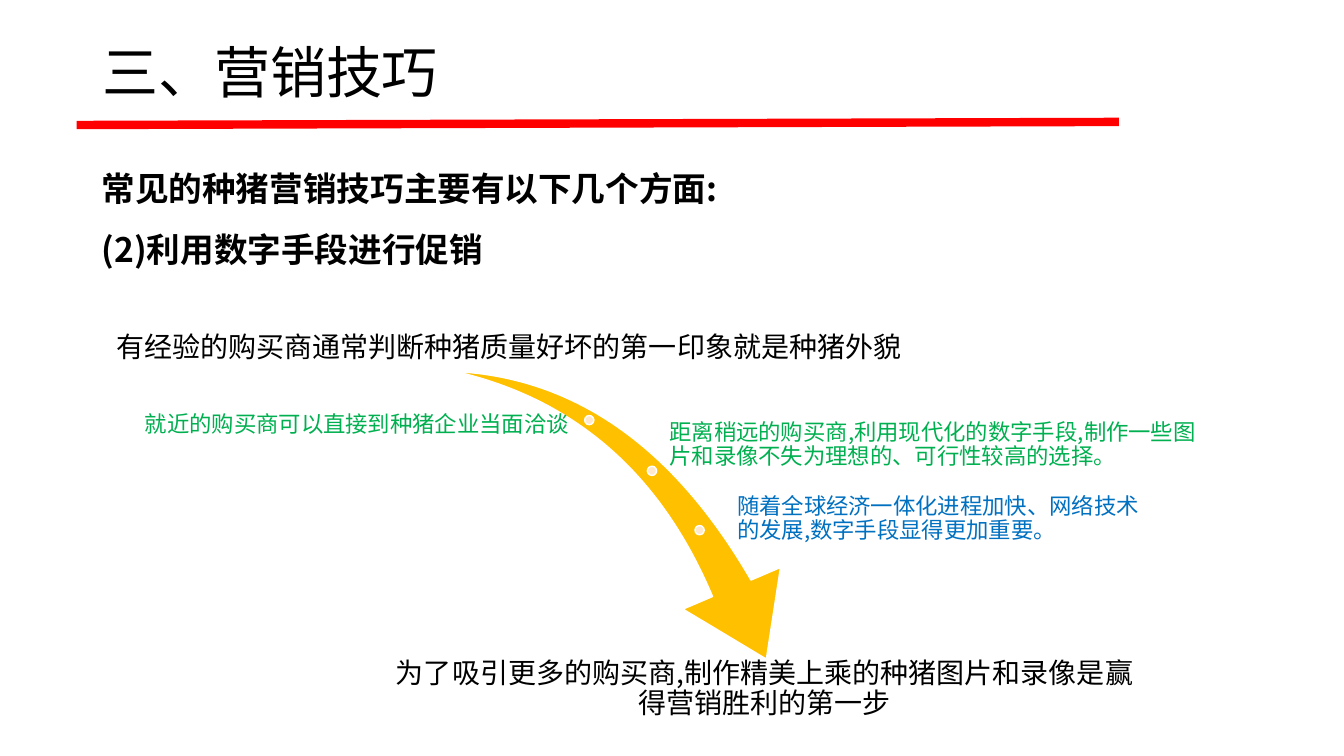
"""Build the slide on digital promotion in breeding-pig marketing."""
import pptx
import pptx.dml.color
import pptx.enum.shapes
import pptx.enum.text
import pptx.oxml
import pptx.util
import lxml.etree

Pt = pptx.util.Pt
ALIGN = pptx.enum.text.PP_ALIGN
ANCHOR = pptx.enum.text.MSO_ANCHOR
SHAPE = pptx.enum.shapes.MSO_SHAPE
DRAWING = "{http://schemas.openxmlformats.org/drawingml/2006/main}"


def color(value):
    """Turn a hex string into a colour."""
    return pptx.dml.color.RGBColor.from_string(value)


class SlideBuilder:
    """Hold the style and the current slide, and add elements to it."""

    font_name = "Noto Sans CJK SC"
    black, white, red = "000000", "FFFFFF", "FF0000"
    gold, cream, green, blue = "FFC000", "FFE8CC", "00B050", "0070C0"

    def __init__(self, slide):
        self.slide = slide

    def text(self, box, lines, size, ink=black, bold=False, align=ALIGN.LEFT,
             anchor=ANCHOR.MIDDLE, margins=(7.2, 3.6), spacing=0.9):
        shape = self.slide.shapes.add_textbox(*map(Pt, box))
        frame = shape.text_frame
        frame.word_wrap = True
        frame.vertical_anchor = anchor
        frame.margin_left = frame.margin_right = Pt(margins[0])
        frame.margin_top = frame.margin_bottom = Pt(margins[1])
        for index, line in enumerate(lines):
            paragraph = frame.add_paragraph() if index else frame.paragraphs[0]
            paragraph.alignment = align
            paragraph.line_spacing = spacing
            run = paragraph.add_run()
            run.text = line
            run.font.name = self.font_name
            run.font.size = Pt(size)
            run.font.bold = bold
            run.font.color.rgb = color(ink)
            east_asian = lxml.etree.SubElement(run.font._element, DRAWING + "ea")
            east_asian.set("typeface", self.font_name)

    def shape(self, kind, box, fill, rotation=0, adjustments=()):
        shape = self.slide.shapes.add_shape(kind, *map(Pt, box))
        shape.shadow.inherit = False
        shape.rotation = rotation
        for index, value in enumerate(adjustments):
            shape.adjustments[index] = value
        shape.fill.solid()
        shape.fill.fore_color.rgb = color(fill)
        shape.line.color.rgb = color(self.white)
        shape.line.width = Pt(1)

    def line(self, start, end, ink, width):
        connector = self.slide.shapes.add_connector(
            pptx.enum.shapes.MSO_CONNECTOR.STRAIGHT, *map(Pt, start + end))
        connector.line.color.rgb = color(ink)
        connector.line.width = Pt(width)
        lxml.etree.SubElement(connector._element.spPr, DRAWING + "effectLst")


def main():
    presentation = pptx.Presentation()
    presentation.slide_width = Pt(960)
    presentation.slide_height = Pt(540)
    builder = SlideBuilder(presentation.slides.add_slide(presentation.slide_layouts[6]))

    builder.line((54.7, 89.3), (799.2, 87.1), builder.red, 6)
    builder.text((66, 1.5, 828, 104.4), ["三、营销技巧"], 40)
    builder.text((65.5, 102.2, 894.5, 89.3),
                 ["常见的种猪营销技巧主要有以下几个方面:", "(2)利用数字手段进行促销"],
                 24, bold=True, anchor=ANCHOR.TOP, spacing=1.5)

    builder.shape(SHAPE.SWOOSH_ARROW, (319.7, 272.9, 260.6, 182.2), builder.gold,
                  rotation=73.3, adjustments=(0.163, 0.314))
    for left, top in ((417.6, 296.8), (462.4, 333), (496.4, 375.4)):
        builder.shape(SHAPE.OVAL, (left, top, 6.6, 6.6), builder.cream)

    builder.text((0, 211.7, 727, 49.7), ["有经验的购买商通常判断种猪质量好坏的第一印象就是种猪外貌"],
                 20, align=ALIGN.CENTER, anchor=ANCHOR.BOTTOM, margins=(2, 2))
    builder.text((272.9, 468.7, 546.5, 35.3),
                 ["为了吸引更多的购买商,制作精美上乘的种猪图片和录像是赢得营销胜利的第一步"],
                 20, align=ALIGN.CENTER, anchor=ANCHOR.TOP, margins=(2, 2))

    notes = (
        ((476.6, 299.5, 388.8, 37.4), builder.green, ALIGN.LEFT,
         "距离稍远的购买商,利用现代化的数字手段,制作一些图片和录像不失为理想的、可行性较高的选择。"),
        ((52.6, 262.8, 355.7, 82.1), builder.green, ALIGN.RIGHT,
         "就近的购买商可以直接到种猪企业当面洽谈"),
        ((524.9, 315.4, 293.8, 110.9), builder.blue, ALIGN.LEFT,
         "随着全球经济一体化进程加快、网络技术的发展,数字手段显得更加重要。"),
    )
    for box, ink, align, wording in notes:
        builder.text(box, [wording], 16, ink, align=align, margins=(1.6, 1.6))

    presentation.save("out.pptx")


if __name__ == "__main__":
    main()
